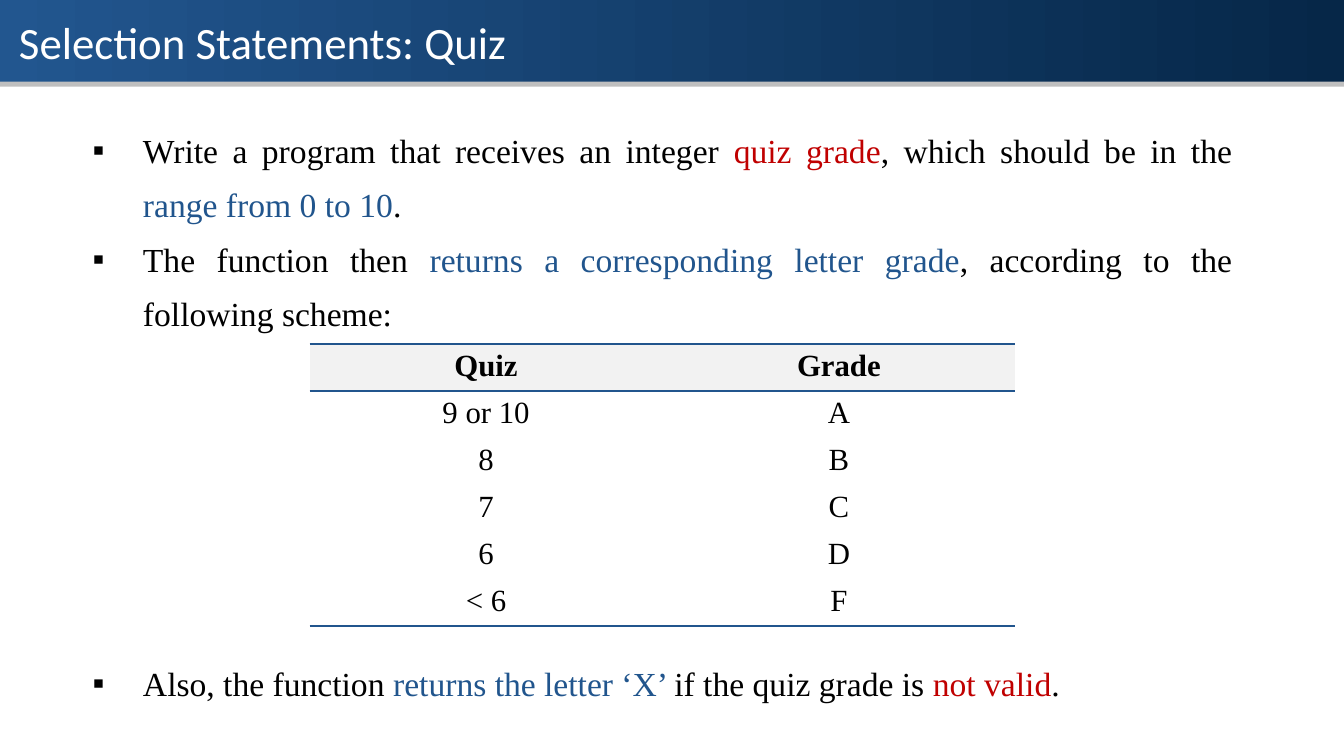
import pptx
import pptx.dml.color
import pptx.enum.dml
import pptx.enum.shapes
import pptx.enum.text
import pptx.oxml
import pptx.oxml.ns
import pptx.util
from pptx.util import Inches

COLORS = {
    "bar_start": "22568F", "bar_end": "062748", "rule": "BFBFBF",
    "white": "FFFFFF", "black": "000000", "red": "C00000",
    "blue": "21558D", "header": "F2F2F2",
}
TITLE_FONT, BODY_FONT = "Calibri", "Times New Roman"
ALIGN = pptx.enum.text.PP_ALIGN

TASKS = [
    [("Write a program that receives an integer ", "black"), ("quiz grade", "red"),
     (", which should be in the ", "black"), ("range from 0 to 10", "blue"), (".", "black")],
    [("The function then ", "black"), ("returns a corresponding letter grade", "blue"),
     (", according to the following scheme:", "black")],
    [("Also, the function ", "black"), ("returns the letter ‘X’ ", "blue"),
     ("if the quiz grade is ", "black"), ("not valid", "red"), (".", "black")],
]
TABLE_GAP = 225
GRADES = [("Quiz", "Grade"), ("9 or 10", "A"), ("8", "B"), ("7", "C"), ("6", "D"), ("< 6", "F")]


def rgb(name):
    """Return the named colour."""
    return pptx.dml.color.RGBColor.from_string(COLORS[name])


def set_font(font, name, size, color=None, bold=False):
    """Apply face, size, weight and, when given, colour."""
    font.name, font.size, font.bold = name, pptx.util.Pt(size), bold
    if color:
        font.color.rgb = rgb(color)


def add_band(slide, left, top, width, height):
    """Add a plain rectangle without line or shadow and return its fill."""
    band = slide.shapes.add_shape(
        pptx.enum.shapes.MSO_SHAPE.RECTANGLE,
        Inches(left), Inches(top), Inches(width), Inches(height))
    band.shadow.inherit = False
    band.line.fill.background()
    return band.fill


def add_text_frame(slide, left, top, width, height):
    """Add a wrapping text box and return its frame."""
    frame = slide.shapes.add_textbox(
        Inches(left), Inches(top), Inches(width), Inches(height)).text_frame
    frame.word_wrap = True
    return frame


def add_title_bar(slide, left, top, width, height):
    """Draw the gradient bar, the grey rule under it and the title."""
    rule_height = 0.05
    bar_height = height - rule_height
    bar = add_band(slide, left, top, width, bar_height)
    bar.gradient()
    bar.gradient_angle = 0
    for stop, color in zip(bar.gradient_stops, ("bar_start", "bar_end")):
        stop.color.rgb = rgb(color)
    rule = add_band(slide, left, top + bar_height, width, rule_height)
    rule.solid()
    rule.fore_color.rgb = rgb("rule")
    title = add_text_frame(slide, left + 0.09, top + 0.1, width - 0.19, 0.64).paragraphs[0]
    title.text = "Selection Statements: Quiz"
    set_font(title.font, TITLE_FONT, 32, "white")


def add_bullet(paragraph):
    """Give a paragraph a hanging square bullet."""
    properties = paragraph._p.get_or_add_pPr()
    properties.set("marL", str(Inches(0.5)))
    properties.set("indent", str(-Inches(0.5)))
    for tag, key, value in (("buFont", "typeface", BODY_FONT), ("buChar", "char", "▪")):
        properties.append(pptx.oxml.parse_xml(
            f'<a:{tag} {pptx.oxml.ns.nsdecls("a")} {key}="{value}"/>'))


def add_tasks(slide, left, top, width, height):
    """Write the bulleted task, leaving room for the table before the last item."""
    frame = add_text_frame(slide, left, top, width, height)
    for index, task in enumerate(TASKS):
        paragraph = frame.paragraphs[0] if index == 0 else frame.add_paragraph()
        add_bullet(paragraph)
        paragraph.alignment = ALIGN.JUSTIFY
        paragraph.line_spacing = 1.35
        set_font(paragraph.font, BODY_FONT, 24)
        for words, color in task:
            run = paragraph.add_run()
            run.text = words
            run.font.color.rgb = rgb(color)
    paragraph.space_before = pptx.util.Pt(TABLE_GAP)


def set_borders(cell, ruled_sides):
    """Rule the given sides of a cell in blue and clear the others."""
    properties = cell._tc.get_or_add_tcPr()
    for side in "LRTB":
        fill = (f'<a:solidFill><a:srgbClr val="{COLORS["blue"]}"/></a:solidFill>'
                if side in ruled_sides else "<a:noFill/>")
        properties.append(pptx.oxml.parse_xml(
            f'<a:ln{side} {pptx.oxml.ns.nsdecls("a")} w="{pptx.util.Pt(1.5)}">{fill}</a:ln{side}>'))


def add_grade_table(slide, left, top, width, height):
    """Draw the quiz-to-grade table with ruled header and foot."""
    table = slide.shapes.add_table(
        len(GRADES), len(GRADES[0]),
        Inches(left), Inches(top), Inches(width), Inches(height)).table
    table.horz_banding = False
    borders = {0: "TB", 1: "T", len(GRADES) - 1: "B"}
    for row, entries in enumerate(GRADES):
        for column, entry in enumerate(entries):
            cell = table.cell(row, column)
            set_borders(cell, borders.get(row, ""))
            if row == 0:
                cell.fill.solid()
                cell.fill.fore_color.rgb = rgb("header")
            else:
                cell.fill.background()
            paragraph = cell.text_frame.paragraphs[0]
            paragraph.text = entry
            paragraph.alignment = ALIGN.CENTER
            set_font(paragraph.font, BODY_FONT, 22, "black", bold=row == 0)


def main():
    """Build and save the quiz slide."""
    deck = pptx.Presentation()
    deck.slide_width, deck.slide_height = Inches(13.33), Inches(7.5)
    slide = deck.slides.add_slide(deck.slide_layouts[6])
    add_title_bar(slide, 0, 0, 13.33, 0.86)
    add_tasks(slide, 0.82, 1.1, 11.5, 5.88)
    add_grade_table(slide, 3.07, 3.41, 7, 2.8)
    deck.save("out.pptx")


if __name__ == "__main__":
    main()
